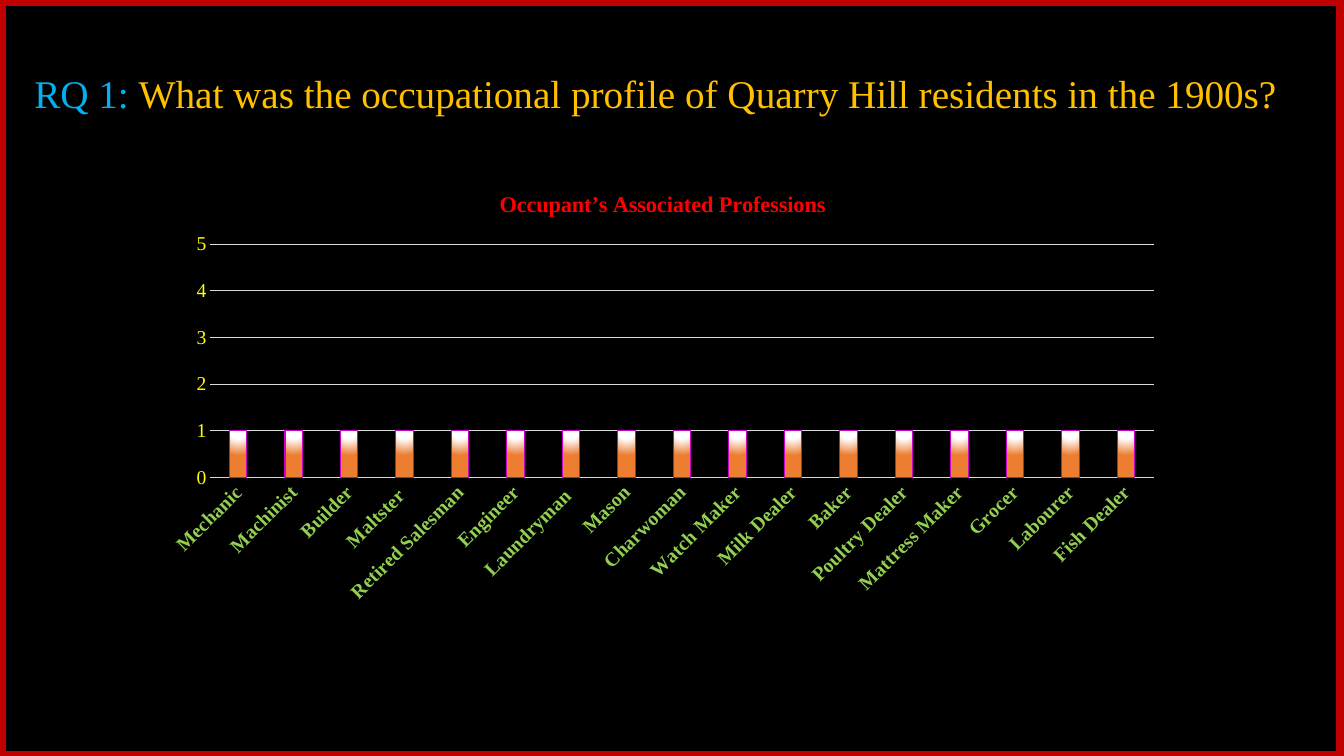
import dataclasses

import pptx
import pptx.chart.data
import pptx.dml.color
import pptx.enum.chart
import pptx.enum.shapes
import pptx.enum.text
import pptx.oxml
import pptx.oxml.ns
import pptx.util

Cm, Pt = pptx.util.Cm, pptx.util.Pt


@dataclasses.dataclass(frozen=True)
class Theme:
    font: str = "Times New Roman"
    background: str = "000000"
    frame: str = "C00000"
    label: str = "00B0F0"
    question: str = "FFC000"
    heading: str = "FF0000"
    profession: str = "92D050"
    count: str = "FFFF00"
    grid: str = "D9D9D9"
    bar_outline: str = "CC00CC"
    bar_light: str = "FFFFFF"
    bar_dark: str = "ED7D31"
    question_size: int = 28
    heading_size: int = 16
    axis_size: int = 14


def rgb(code):
    return pptx.dml.color.RGBColor.from_string(code)


def style_font(font, size, color, bold=False):
    font.name = theme.font
    font.size = Pt(size)
    font.bold = bold
    font.color.rgb = rgb(color)


theme = Theme()
deck = pptx.Presentation()
deck.slide_width, deck.slide_height = Cm(33.87), Cm(19.05)
slide = deck.slides.add_slide(deck.slide_layouts[5])
slide.background.fill.solid()
slide.background.fill.fore_color.rgb = rgb(theme.background)

frame = slide.shapes.add_shape(
    pptx.enum.shapes.MSO_SHAPE.RECTANGLE, Cm(0.05), Cm(0.05), Cm(33.73), Cm(18.97))
frame.shadow.inherit = False
frame.fill.background()
frame.line.color.rgb = rgb(theme.frame)
frame.line.width = Pt(6)

question = slide.shapes.title
question.left, question.top = Cm(0.28), Cm(0.61)
question.width, question.height = Cm(33.17), Cm(2.87)
question.text_frame.word_wrap = True
question.text_frame.auto_size = pptx.enum.text.MSO_AUTO_SIZE.NONE
question.text_frame.vertical_anchor = pptx.enum.text.MSO_ANCHOR.MIDDLE
wording = question.text_frame.paragraphs[0]
wording.alignment = pptx.enum.text.PP_ALIGN.JUSTIFY
wording.line_spacing = 1.5
wording._p.get_or_add_pPr().set("marL", str(Cm(0.33)))
wording.font.name = theme.font
wording.font.size = Pt(theme.question_size)
for words, color in (
    ("RQ 1: ", theme.label),
    ("What was the occupational profile of Quarry Hill residents in the 1900s?", theme.question),
):
    part = wording.add_run()
    part.text = words
    part.font.color.rgb = rgb(color)

heading = "Occupant’s Associated Professions"
professions = [
    "Mechanic", "Machinist", "Builder", "Maltster ", "Retired Salesman", "Engineer",
    "Laundryman ", "Mason", "Charwoman", "Watch Maker", "Milk Dealer", "Baker",
    "Poultry Dealer", "Mattress Maker", "Grocer", "Labourer", "Fish Dealer",
]
occupants = pptx.chart.data.CategoryChartData()
occupants.categories = professions
occupants.add_series(heading, [1] * len(professions))
chart = slide.shapes.add_chart(
    pptx.enum.chart.XL_CHART_TYPE.COLUMN_CLUSTERED,
    Cm(3.81), Cm(4.32), Cm(25.78), Cm(11.1), occupants).chart
chart.has_legend = False
chart.font.name = theme.font
chart.has_title = True
chart.chart_title.include_in_layout = False
chart_heading = chart.chart_title.text_frame
chart_heading.text = heading
style_font(chart_heading.paragraphs[0].font, theme.heading_size, theme.heading, True)

profession_axis, count_axis = chart.category_axis, chart.value_axis
for axis in (profession_axis, count_axis):
    axis.major_tick_mark = axis.minor_tick_mark = pptx.enum.chart.XL_TICK_MARK.NONE
style_font(profession_axis.tick_labels.font, theme.axis_size, theme.profession, True)
style_font(count_axis.tick_labels.font, theme.axis_size, theme.count)
label_body = profession_axis._element.find(
    pptx.oxml.ns.qn("c:txPr")).find(pptx.oxml.ns.qn("a:bodyPr"))
label_body.set("rot", "-2700000")
label_body.set("vert", "horz")
count_axis.minimum_scale, count_axis.maximum_scale, count_axis.major_unit = 0, 5, 1
count_axis.format.line.fill.background()
for rule in (profession_axis.format.line, count_axis.major_gridlines.format.line):
    rule.color.rgb = rgb(theme.grid)
    rule.width = Pt(0.75)

plot = chart.plots[0]
plot.gap_width = 219
plot.vary_by_categories = False
bars = plot.series[0]
bars.format.line.color.rgb = rgb(theme.bar_outline)
bars.format.line.width = Pt(0.75)
bars.format.fill.solid()
stops = "".join(
    f'<a:gs pos="{position * 1000}"><a:srgbClr val="{color}"/></a:gs>'
    for position, color in ((0, theme.bar_light), (35, theme.bar_light), (100, theme.bar_dark)))
glow = pptx.oxml.parse_xml(
    f'<a:gradFill {pptx.oxml.ns.nsdecls("a")}><a:gsLst>{stops}</a:gsLst>'
    '<a:path path="circle"><a:fillToRect l="50000" t="-80000" r="50000" b="180000"/></a:path>'
    '</a:gradFill>')
bar_format = bars._element.find(pptx.oxml.ns.qn("c:spPr"))
bar_format.replace(bar_format.find(pptx.oxml.ns.qn("a:solidFill")), glow)

deck.save("out.pptx")
